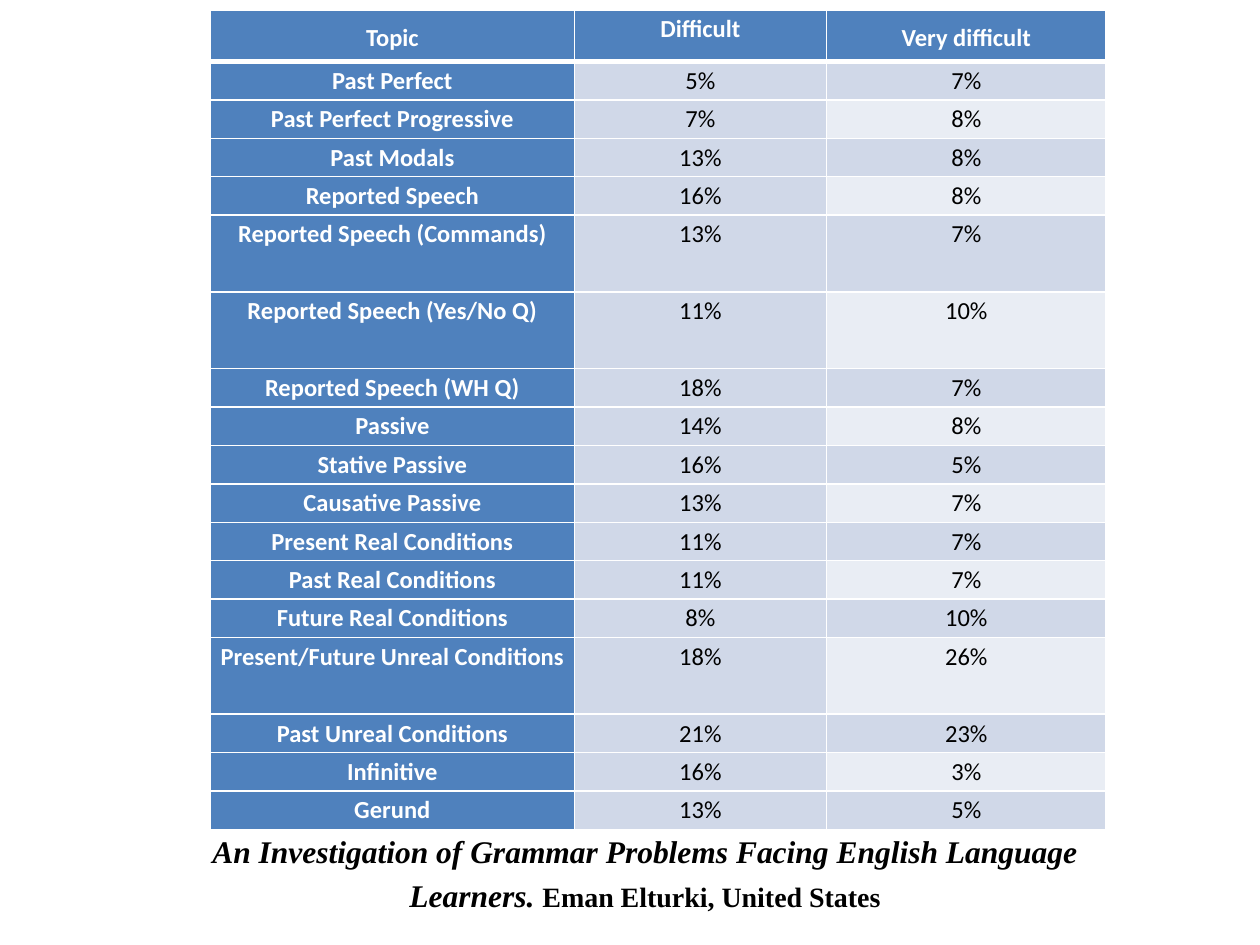
from lxml import etree
from pptx import Presentation
from pptx.dml.color import RGBColor
from pptx.enum.text import MSO_ANCHOR, MSO_AUTO_SIZE, PP_ALIGN
from pptx.oxml.ns import qn
from pptx.util import Cm, Pt

CENTER = PP_ALIGN.CENTER
TOP, MIDDLE = MSO_ANCHOR.TOP, MSO_ANCHOR.MIDDLE
FIT_SHAPE = MSO_AUTO_SIZE.SHAPE_TO_FIT_TEXT

HEADINGS = [("Topic", MIDDLE), ("Difficult", TOP), ("Very difficult", MIDDLE)]
# topic, difficult, very difficult, height in row units
TOPICS = [
    ("Past Perfect", "5%", "7%", 1),
    ("Past Perfect Progressive", "7%", "8%", 1),
    ("Past Modals", "13%", "8%", 1),
    ("Reported Speech", "16%", "8%", 1),
    ("Reported Speech (Commands)", "13%", "7%", 2),
    ("Reported Speech (Yes/No Q)", "11%", "10%", 2),
    ("Reported Speech (WH Q)", "18%", "7%", 1),
    ("Passive", "14%", "8%", 1),
    ("Stative Passive", "16%", "5%", 1),
    ("Causative Passive", "13%", "7%", 1),
    ("Present Real Conditions", "11%", "7%", 1),
    ("Past Real Conditions", "11%", "7%", 1),
    ("Future Real Conditions", "8%", "10%", 1),
    ("Present/Future Unreal Conditions", "18%", "26%", 2),
    ("Past Unreal Conditions", "21%", "23%", 1),
    ("Infinitive", "16%", "3%", 1),
    ("Gerund", "13%", "5%", 1),
]
SOURCE_TITLE = "An Investigation of Grammar Problems Facing English Language Learners. "
SOURCE_AUTHOR = "Eman Elturki, United States"

THEME = {
    "table_font": "Calibri", "source_font": "Times New Roman",
    "table_size": 14, "title_size": 18, "author_size": 16,
    "white": "FFFFFF", "black": "000000", "blue": "4F81BD",
    "band_dark": "D0D8E8", "band_light": "E9EDF4",
    "line_spacing": 1.15, "rule": 1, "header_rule": 3,
}

TABLE_LEFT, TABLE_TOP, TABLE_HEIGHT = 4.24, 0.2, 16.52
COLUMN_WIDTHS = [7.34, 5.08, 5.64]
HEADER_HEIGHT = 1.04
CELL_INSET = 0.15


def style_span(span, font, size, color, bold=False, italic=False):
    span.font.name = font
    span.font.size = Pt(size)
    span.font.bold = bold
    span.font.italic = italic
    span.font.color.rgb = RGBColor.from_string(color)


def add_borders(cell, top, bottom):
    """Draw white rules round a cell; top and bottom are widths in points."""
    properties = cell._tc.get_or_add_tcPr()
    sides = {"L": THEME["rule"], "R": THEME["rule"], "T": top, "B": bottom}
    for side, width in sides.items():
        line = etree.SubElement(properties, qn(f"a:ln{side}"), w=str(Pt(width)))
        fill = etree.SubElement(line, qn("a:solidFill"))
        etree.SubElement(fill, qn("a:srgbClr"), val=THEME["white"])


def fill_cell(cell, text, fill, color, bold, anchor=TOP,
              top=THEME["rule"], bottom=THEME["rule"]):
    add_borders(cell, top, bottom)
    cell.fill.solid()
    cell.fill.fore_color.rgb = RGBColor.from_string(fill)
    cell.margin_left = cell.margin_right = Cm(CELL_INSET)
    cell.margin_top = cell.margin_bottom = 0
    cell.vertical_anchor = anchor
    para = cell.text_frame.paragraphs[0]
    para.text = text
    para.alignment = CENTER
    para.line_spacing = THEME["line_spacing"]
    style_span(para.runs[0], THEME["table_font"], THEME["table_size"], color, bold)


def add_source(page):
    box = page.shapes.add_textbox(Cm(3.71), Cm(16.54), Cm(18.59), Cm(2.03))
    frame = box.text_frame
    frame.word_wrap = True
    frame.auto_size = FIT_SHAPE
    para = frame.paragraphs[0]
    para.alignment = CENTER
    para.line_spacing = THEME["line_spacing"]
    para.space_after = Pt(6)
    for text, size, italic in [(SOURCE_TITLE, THEME["title_size"], True),
                               (SOURCE_AUTHOR, THEME["author_size"], False)]:
        span = para.add_run()
        span.text = text
        style_span(span, THEME["source_font"], size, THEME["black"], True, italic)


def add_topic_table(page):
    table = page.shapes.add_table(
        len(TOPICS) + 1, len(HEADINGS), Cm(TABLE_LEFT), Cm(TABLE_TOP),
        Cm(sum(COLUMN_WIDTHS)), Cm(TABLE_HEIGHT)).table
    table.horz_banding = False
    for column, width in zip(table.columns, COLUMN_WIDTHS):
        column.width = Cm(width)

    table.rows[0].height = Cm(HEADER_HEIGHT)
    for column, (heading, anchor) in enumerate(HEADINGS):
        fill_cell(table.cell(0, column), heading, THEME["blue"], THEME["white"],
                  True, anchor, bottom=THEME["header_rule"])

    unit = (TABLE_HEIGHT - HEADER_HEIGHT) / sum(topic[-1] for topic in TOPICS)
    for row, (topic, difficult, very_difficult, units) in enumerate(TOPICS, 1):
        table.rows[row].height = Cm(unit * units)
        top = THEME["header_rule"] if row == 1 else THEME["rule"]
        band = THEME["band_dark"] if row % 2 else THEME["band_light"]
        fill_cell(table.cell(row, 0), topic, THEME["blue"], THEME["white"], True, top=top)
        for column, (share, fill) in enumerate(
                [(difficult, THEME["band_dark"]), (very_difficult, band)], 1):
            fill_cell(table.cell(row, column), share, fill, THEME["black"], False, top=top)


def main():
    deck = Presentation()
    deck.slide_width, deck.slide_height = Cm(25.4), Cm(19.05)
    page = deck.slides.add_slide(deck.slide_layouts[6])
    add_source(page)
    add_topic_table(page)
    deck.save("out.pptx")


if __name__ == "__main__":
    main()
